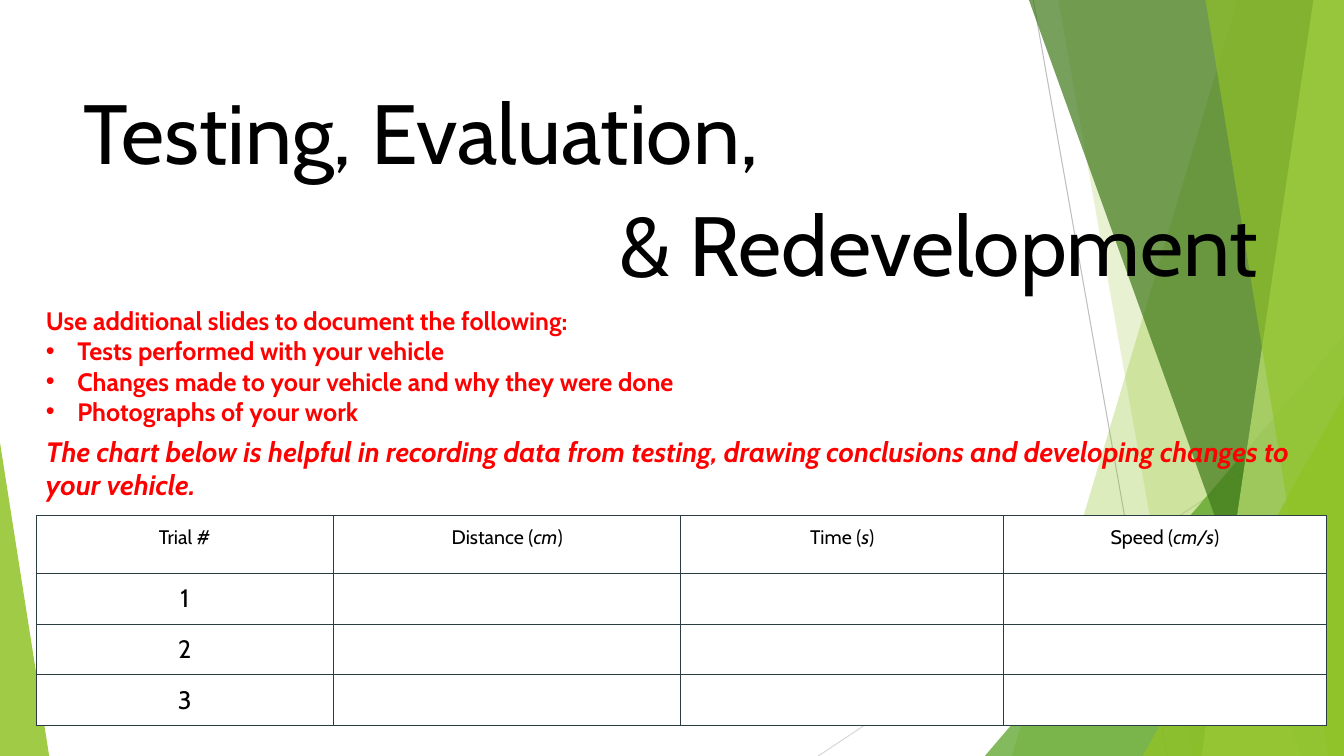
import pptx
import pptx.util
import pptx.dml.color
import pptx.enum.shapes
import pptx.enum.text
import pptx.oxml
import pptx.oxml.ns
from lxml import etree

Cm = pptx.util.Cm
Pt = pptx.util.Pt
ALIGN = pptx.enum.text.PP_ALIGN
WIDE, HIGH = 33.87, 19.05
HUES = {
    "white": "FFFFFF", "black": "000000", "red": "FF0000", "rule": "2C3C43",
    "grey": "BFBFBF", "pale": "D9D9D9", "leaf": "90C226", "grass": "54A021",
    "pine": "3F7819", "lime": "C0E474",
}
FORMS = {
    "title": {"size": Pt(60), "bold": False, "italic": False},
    "list": {"size": Pt(18), "bold": True, "italic": False},
    "note": {"size": Pt(20), "bold": True, "italic": True},
    "head": {"size": Pt(14), "bold": False, "italic": False},
    "unit": {"size": Pt(14), "bold": False, "italic": True},
    "cell": {"size": Pt(18), "bold": False, "italic": False},
}


def hue(name):
    return pptx.dml.color.RGBColor.from_string(HUES[name])


def write(para, text, form, tint="black"):
    run = para.add_run()
    run.text = text
    for key, value in FORMS[form].items():
        setattr(run.font, key, value)
    run.font.name = "Cabin"
    run.font.color.rgb = hue(tint)


def paint(shape, tint, alpha):
    shape.shadow.inherit = False
    shape.line.fill.background()
    shape.fill.solid()
    shape.fill.fore_color.rgb = hue(tint)
    color = shape.fill._xPr.find(".//" + pptx.oxml.ns.qn("a:srgbClr"))
    etree.SubElement(color, pptx.oxml.ns.qn("a:alpha"), val=str(alpha * 1000))


def stroke(slide, start, end, tint):
    kind = pptx.enum.shapes.MSO_CONNECTOR.STRAIGHT
    line = slide.shapes.add_connector(kind, *map(Cm, start + end))
    line.line.color.rgb = hue(tint)
    line.line.width = Pt(0.75)
    etree.SubElement(line._element.spPr, pptx.oxml.ns.qn("a:effectLst"))


def band(slide, top, base, tint, alpha):
    pen = slide.shapes.build_freeform(Cm(top), 0)
    ends = [(WIDE, 0), (WIDE, HIGH), (base, HIGH)]
    pen.add_line_segments([(Cm(x), Cm(y)) for x, y in ends])
    paint(pen.convert_to_shape(), tint, alpha)


def wedge(slide, left, top, width, peak, tint, alpha):
    kind = pptx.enum.shapes.MSO_SHAPE.ISOSCELES_TRIANGLE
    box = map(Cm, (left, top, width, HIGH - top))
    shape = slide.shapes.add_shape(kind, *box)
    shape.adjustments[0] = peak
    paint(shape, tint, alpha)


def place(shape, box):
    for key, value in zip(("left", "top", "width", "height"), box):
        setattr(shape, key, Cm(value))


def fit(shape, wrap):
    frame = shape.text_frame
    values = {
        "word_wrap": wrap,
        "auto_size": pptx.enum.text.MSO_AUTO_SIZE.NONE,
        "vertical_anchor": pptx.enum.text.MSO_ANCHOR.TOP,
    }
    for key, value in values.items():
        setattr(frame, key, value)
    return frame


def head(shape, box, text):
    place(shape, box)
    para = fit(shape, False).paragraphs[0]
    para.alignment = ALIGN.CENTER
    write(para, text, "title")


def bullet(para):
    props = para._p.get_or_add_pPr()
    props.set("marL", str(Cm(0.79)))
    props.set("indent", str(-Cm(0.79)))
    etree.SubElement(props, pptx.oxml.ns.qn("a:buFont"), typeface="Arial")
    etree.SubElement(props, pptx.oxml.ns.qn("a:buChar"), char="•")


def block(slide, box, lines, form):
    frame = fit(slide.shapes.add_textbox(*map(Cm, box)), True)
    for num, text in enumerate(lines):
        para = frame.add_paragraph() if num else frame.paragraphs[0]
        if num:
            bullet(para)
        write(para, text, form, "red")


def edge(cell):
    props = cell._tc.get_or_add_tcPr()
    for side in "LRTB":
        props.append(pptx.oxml.parse_xml(
            f'<a:ln{side} {pptx.oxml.ns.nsdecls("a")} w="{Pt(0.75)}"><a:solidFill>'
            f'<a:srgbClr val="{HUES["rule"]}"/></a:solidFill></a:ln{side}>'))


def dress(cell):
    for side in ("left", "right", "top", "bottom"):
        setattr(cell, "margin_" + side, Cm(0.25))
    edge(cell)
    cell.fill.solid()
    cell.fill.fore_color.rgb = hue("white")
    cell.text_frame.paragraphs[0].alignment = ALIGN.CENTER


def grid(slide):
    cols, rows = [7.49, 8.76, 8.13, 8.13], [1.45, 1.27, 1.27, 1.27]
    box = map(Cm, (0.91, 13, sum(cols), sum(rows)))
    table = slide.shapes.add_table(len(rows), len(cols), *box).table
    table.first_row = table.horz_banding = False
    for col, width in zip(table.columns, cols):
        col.width = Cm(width)
    for row, height in zip(table.rows, rows):
        row.height = Cm(height)
    for cell in table.iter_cells():
        dress(cell)
    heads = [("Trial #", ""), ("Distance", "cm"), ("Time", "s"), ("Speed", "cm/s")]
    for col, (name, unit) in enumerate(heads):
        para = table.cell(0, col).text_frame.paragraphs[0]
        write(para, name + " (" if unit else name, "head")
        if unit:
            write(para, unit, "unit")
            write(para, ")", "head")
    for num in range(1, len(rows)):
        write(table.cell(num, 0).text_frame.paragraphs[0], str(num), "cell")


def decor(slide):
    stroke(slide, (26.04, 0), (29.41, HIGH), "grey")
    stroke(slide, (WIDE, 10.24), (20.62, HIGH), "pale")
    band(slide, 31.19, 25.5, "leaf", 30)
    band(slide, 26.67, 30.05, "leaf", 20)
    wedge(slide, 24.82, 8.46, 9.05, 1, "grass", 72)
    band(slide, 25.93, 32.79, "pine", 70)
    band(slide, 33.1, 30.28, "lime", 70)
    band(slide, 30.38, 33.48, "leaf", 65)
    wedge(slide, 28.8, 9.98, 5.07, 1, "leaf", 80)
    wedge(slide, 0, 11.15, 1.24, 0, "leaf", 85)


def main():
    deck = pptx.Presentation()
    deck.slide_width, deck.slide_height = Cm(WIDE), Cm(HIGH)
    slide = deck.slides.add_slide(deck.slide_layouts.get_by_name("Title Only"))
    decor(slide)
    head(slide.shapes.title, (0.53, 1.91, 20.14, 2.82), "Testing, Evaluation,")
    tail = slide.shapes.add_textbox(0, 0, 0, 0)
    head(tail, (13.89, 4.72, 19.53, 2.82), "& Redevelopment")
    grid(slide)
    block(slide, (0.91, 10.82, 32.51, 1.96), [
        "The chart below is helpful in recording data from testing, "
        "drawing conclusions and developing changes to your vehicle."], "note")
    block(slide, (0.91, 7.57, 32.11, 4.11), [
        "Use additional slides to document the following:",
        "Tests performed with your vehicle",
        "Changes made to your vehicle and why they were done",
        "Photographs of your work"], "list")
    deck.save("out.pptx")


if __name__ == "__main__":
    main()
